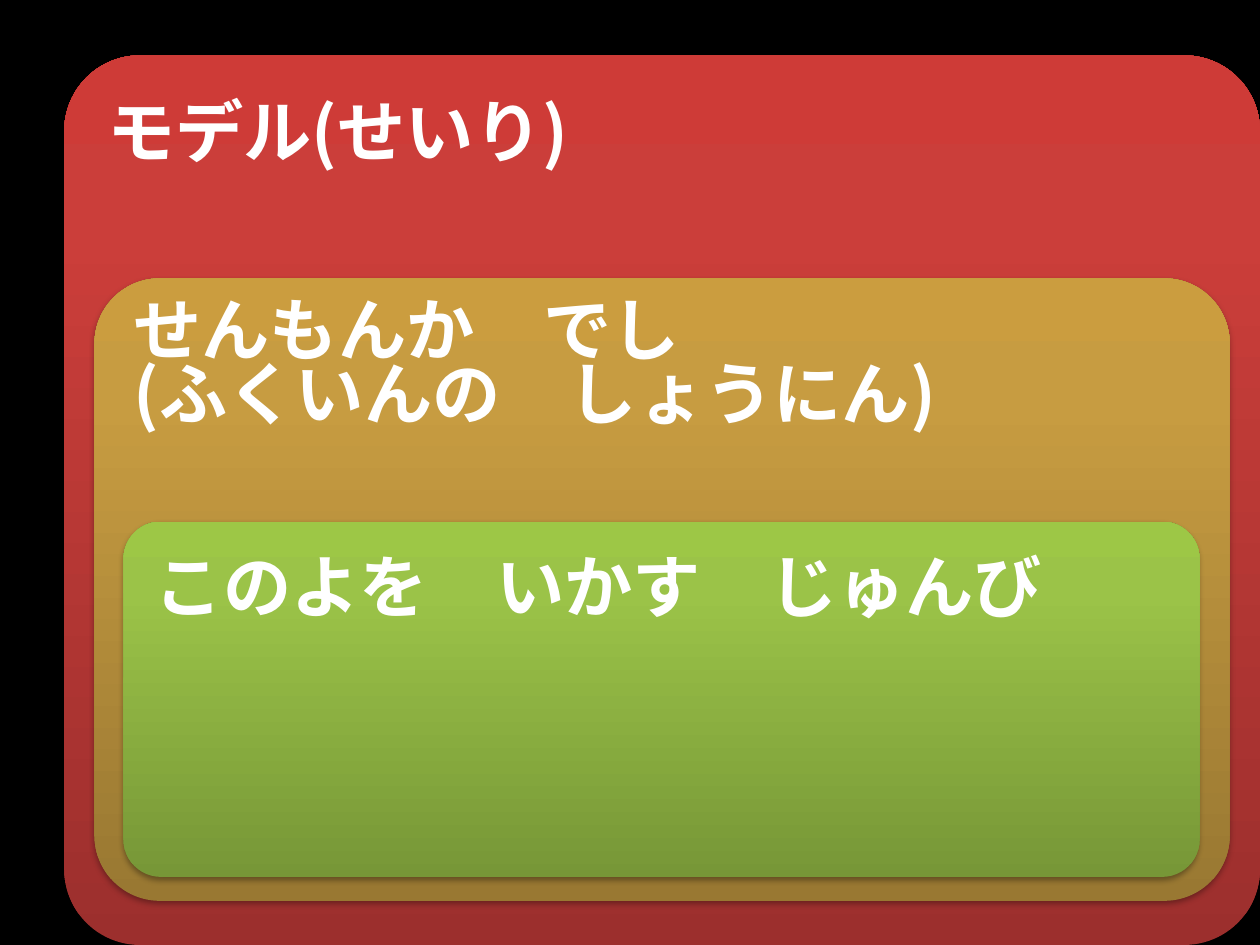
from lxml.etree import SubElement as Sub
from pptx import Presentation
from pptx.dml.color import RGBColor as RGB
from pptx.enum.shapes import MSO_SHAPE as Kind
from pptx.enum.text import MSO_ANCHOR as Anchor, PP_ALIGN as Align
from pptx.oxml.ns import qn
from pptx.util import Pt

FONT = "Noto Sans CJK KR"
BLACK = RGB(0x00, 0x00, 0x00)
WHITE = RGB(0xFF, 0xFF, 0xFF)
# Dark foot, main tone and bright top of each panel
RED = RGB(0x9C, 0x2F, 0x2D), RGB(0xCB, 0x3E, 0x3A), RGB(0xCE, 0x3B, 0x37)
GOLD = RGB(0x99, 0x78, 0x32), RGB(0xC7, 0x9C, 0x41), RGB(0xCB, 0x9D, 0x3F)
GREEN = RGB(0x77, 0x97, 0x37), RGB(0x9B, 0xC3, 0x48), RGB(0x9D, 0xC7, 0x46)
STOPS = 0, 80, 100
PAD = Pt(11.5)

# Panel box, corner ratio, tones, text box, line spacing, lines
LAYERS = [
    ((36.7, 31.7, 683.3, 508.3), 0.085, RED,
     (49.7, 44.6, 658.1, 483.1), 0.9, ["モデル(せいり)"]),
    ((54, 159.1, 648.7, 355.7), 0.105, GOLD,
     (64.8, 172.9, 627.1, 331.1), 0.5,
     ["せんもんか　でし", "(ふくいんの　しょうにん)"]),
    ((70.6, 298.1, 614.9, 203), 0.105, GREEN,
     (77, 304.6, 602.6, 190.8), 0.9, ["このよを　いかす　じゅんび"]),
]


def points(box):
    return [Pt(n) for n in box]


def add_shade(shape):
    """Drop a soft shadow straight below the shape."""
    shape.shadow.inherit = False
    glow = Sub(shape._element.spPr.find(qn("a:effectLst")), qn("a:outerShdw"),
               blurRad=str(Pt(3.1)), dist=str(Pt(1.8)), dir="5400000",
               rotWithShape="0")
    tone = Sub(glow, qn("a:srgbClr"), val=str(BLACK))
    Sub(tone, qn("a:alpha"), val="35000")


def add_panel(slide, box, ratio, tones):
    panel = slide.shapes.add_shape(Kind.ROUNDED_RECTANGLE, *points(box))
    panel.adjustments[0] = ratio
    panel.line.fill.background()
    panel.fill.gradient()
    panel.fill.gradient_angle = 90
    stops = panel._element.spPr.find(".//" + qn("a:gsLst"))
    for old in list(stops):
        stops.remove(old)
    for stop, tone in zip(STOPS, tones):
        mark = Sub(stops, qn("a:gs"), pos=str(stop * 1000))
        Sub(mark, qn("a:srgbClr"), val=str(tone))
    add_shade(panel)


def add_label(slide, box, pitch, lines):
    frame = slide.shapes.add_textbox(*points(box)).text_frame
    frame.word_wrap = True
    frame.vertical_anchor = Anchor.TOP
    frame.margin_left = frame.margin_right = PAD
    frame.margin_top = frame.margin_bottom = PAD
    for i, line in enumerate(lines):
        para = frame.add_paragraph() if i else frame.paragraphs[0]
        para.alignment = Align.LEFT
        para.line_spacing = pitch
        para.space_after = Pt(13.4)
        run = para.add_run()
        run.text = line
        font = run.font
        font.name, font.size, font.bold = FONT, Pt(39), True
        font.color.rgb = WHITE
        props = run._r.get_or_add_rPr()
        props.set("lang", "ja-JP")
        Sub(props, qn("a:ea"), typeface=FONT)


def main():
    deck = Presentation()
    deck.slide_width, deck.slide_height = Pt(720), Pt(540)
    slide = deck.slides.add_slide(deck.slide_layouts[6])
    back = slide.background.fill
    back.solid()
    back.fore_color.rgb = BLACK
    for box, ratio, tones, area, pitch, lines in LAYERS:
        add_panel(slide, box, ratio, tones)
        add_label(slide, area, pitch, lines)
    deck.save("out.pptx")


if __name__ == "__main__":
    main()
